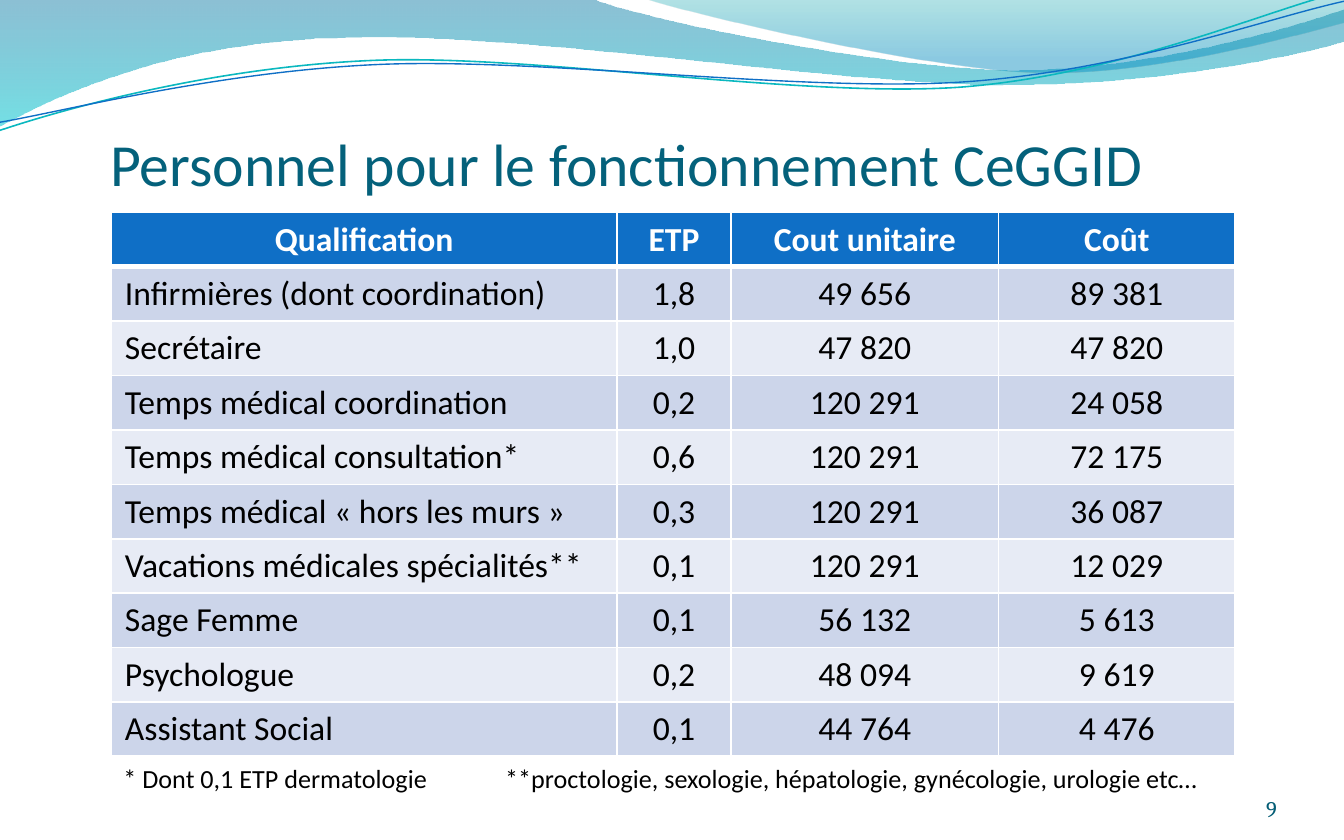
import pptx
import pptx.dml.color
import pptx.enum.text
import pptx.oxml
import pptx.oxml.ns
import pptx.util
from pptx.util import Inches

COLORS = {
    "title": "04617B", "number": "045D75", "text": "000000", "white": "FFFFFF",
    "header": "0F6FC6", "odd": "CCD5EA", "even": "E7EBF5",
    "teal line": "0AB8BF", "blue line": "0F6FC6",
    "wave top": "0074A1", "wave bottom": "00C6CF",
    "crest top": "00A1A9", "crest bottom": "008BBF",
}
ALIGN = pptx.enum.text.PP_ALIGN
ANCHOR = pptx.enum.text.MSO_ANCHOR
NS = pptx.oxml.ns.nsdecls("a")


def rgb(name):
    return pptx.dml.color.RGBColor.from_string(COLORS[name])


def add_run(paragraph, text, size, color, font="Calibri", bold=False):
    run = paragraph.add_run()
    run.text = text
    run.font.name = font
    run.font.size = pptx.util.Pt(size)
    run.font.bold = bold
    run.font.color.rgb = rgb(color)


deck = pptx.Presentation()
deck.slide_width, deck.slide_height = Inches(10), Inches(6.25)
slide = deck.slides.add_slide(deck.slide_layouts[6])

# Waves and lines: a start point, then 2 values for a straight, 6 for a Bézier curve
wave = [(0, 0), (4.4, -0.01), (4.76, 0.14, 6.64, 0.52, 7.58, 0.52),
        (8.53, 0.52, 9.58, 0.21, 10, 0.07), (10.01, 0.3),
        (9.83, 0.37, 8.7, 0.63, 7.46, 0.63), (6.22, 0.63, 3.82, 0.23, 2.57, 0.28),
        (1.29, 0.3, 0.46, 0.69, -0.01, 0.94), (0, 0)]
crest = [(4.79, -0.01), (5.09, 0.09, 6.82, 0.51, 7.69, 0.54),
         (8.56, 0.57, 9.61, 0.27, 10, 0.17), (10, 0), (4.79, -0.01)]
teal_line = [(0, 0.97), (0.48, 0.81, 1.58, 0.5, 2.77, 0.45),
             (3.95, 0.4, 5.92, 0.73, 7.13, 0.65), (8.33, 0.56, 9.39, 0.09, 9.98, -0.06)]
blue_line = [(0, 0.91), (0.47, 0.83, 1.64, 0.53, 2.83, 0.48),
             (4.03, 0.43, 5.97, 0.69, 7.17, 0.61), (8.36, 0.53, 9.41, 0.14, 10, 0.01)]
# Gradient stops: position, colour, opacity in percent
wave_stops = [(0, "wave top", 45), (1, "wave bottom", 55)]
crest_stops = [(0, "crest top", 30), (0.8, "crest bottom", 45)]

for outline, stops, line_color, line_width in [
    (wave, wave_stops, None, 0),
    (crest, crest_stops, None, 0),
    (teal_line, None, "teal line", 0.85),
    (blue_line, None, "blue line", 0.75),
]:
    ends = [(Inches(segment[-2]), Inches(segment[-1])) for segment in outline]
    builder = slide.shapes.build_freeform(*ends[0], scale=1.0)
    builder.add_line_segments(ends[1:], close=stops is not None)
    ribbon = builder.convert_to_shape()
    ribbon.shadow.inherit = False

    # Turn the straight steps into curves where control points are given
    for step, segment in zip(ribbon._element.xpath(".//a:lnTo"), outline[1:]):
        if len(segment) == 6:
            points = "".join(
                f'<a:pt x="{Inches(x) - ribbon.left}" y="{Inches(y) - ribbon.top}"/>'
                for x, y in zip(segment[::2], segment[1::2]))
            curve = pptx.oxml.parse_xml(f"<a:cubicBezTo {NS}>{points}</a:cubicBezTo>")
            step.getparent().replace(step, curve)

    if stops:
        ribbon.line.fill.background()
        ribbon.fill.gradient()
        ribbon.fill.gradient_angle = 270
        for stop, (position, color, opacity) in zip(ribbon.fill.gradient_stops, stops):
            stop.position = position
            stop.color.rgb = rgb(color)
            stop.color._xFill[0].append(
                pptx.oxml.parse_xml(f'<a:alpha {NS} val="{opacity * 1000}"/>'))
    else:
        ribbon.fill.background()
        ribbon.line.color.rgb = rgb(line_color)
        ribbon.line.width = pptx.util.Pt(line_width)

# Title
title = slide.shapes.add_textbox(Inches(0.82), Inches(0.44), Inches(9), Inches(1.04)).text_frame
title.word_wrap = True
title.vertical_anchor = ANCHOR.BOTTOM
title.margin_left = title.margin_right = title.margin_bottom = 0
add_run(title.paragraphs[0], "Personnel pour le fonctionnement CeGGID", 32, "title")

# Staff table
staff = [
    ("Qualification", "ETP", "Cout unitaire", "Coût"),
    ("Infirmières (dont coordination)", "1,8", "49 656", "89 381"),
    ("Secrétaire", "1,0", "47 820", "47 820"),
    ("Temps médical coordination", "0,2", "120 291", "24 058"),
    ("Temps médical consultation*", "0,6", "120 291", "72 175"),
    ("Temps médical « hors les murs »", "0,3", "120 291", "36 087"),
    ("Vacations médicales spécialités**", "0,1", "120 291", "12 029"),
    ("Sage Femme", "0,1", "56 132", "5 613"),
    ("Psychologue", "0,2", "48 094", "9 619"),
    ("Assistant Social", "0,1", "44 764", "4 476"),
]
table = slide.shapes.add_table(len(staff), 4, Inches(0.83), Inches(1.58),
                               Inches(8.36), Inches(4.05)).table
for column, width in zip(table.columns, (3.76, 0.85, 1.99, 1.76)):
    column.width = Inches(width)

for r, record in enumerate(staff):
    is_header = r == 0
    band = "header" if is_header else "odd" if r % 2 else "even"
    for c, value in enumerate(record):
        cell = table.cell(r, c)
        borders = {"L": 1, "R": 1, "T": 3 if r == 1 else 1, "B": 3 if is_header else 1}
        for side, width in borders.items():
            cell._tc.get_or_add_tcPr().append(pptx.oxml.parse_xml(
                f'<a:ln{side} {NS} w="{pptx.util.Pt(width)}"><a:solidFill>'
                f'<a:srgbClr val="{COLORS["white"]}"/></a:solidFill></a:ln{side}>'))
        cell.fill.solid()
        cell.fill.fore_color.rgb = rgb(band)
        entry = cell.text_frame.paragraphs[0]
        entry.alignment = ALIGN.CENTER if is_header or c else ALIGN.LEFT
        add_run(entry, value, 18, "white" if is_header else "text", bold=is_header)

# Slide number
number = slide.shapes.add_textbox(Inches(8.67), Inches(5.79), Inches(0.83), Inches(0.33)).text_frame
number.word_wrap = True
number.vertical_anchor = ANCHOR.BOTTOM
number.margin_left = number.margin_right = number.margin_top = number.margin_bottom = 0
number.paragraphs[0].alignment = ALIGN.RIGHT
add_run(number.paragraphs[0], "9", 12, "number", font="Cambria")

# Footnotes, the second one at a tab stop
notes = slide.shapes.add_textbox(Inches(0.82), Inches(5.62), Inches(8.36), Inches(0.34)).text_frame
notes.word_wrap = True
footnote = notes.paragraphs[0]
footnote._p.get_or_add_pPr().append(pptx.oxml.parse_xml(
    f'<a:tabLst {NS}><a:tab pos="{Inches(2.84)}" algn="l"/></a:tabLst>'))
add_run(footnote, "* Dont 0,1 ETP dermatologie\t**proctologie, sexologie, hépatologie, "
        "gynécologie, urologie etc…", 14, "text")

deck.save("out.pptx")
